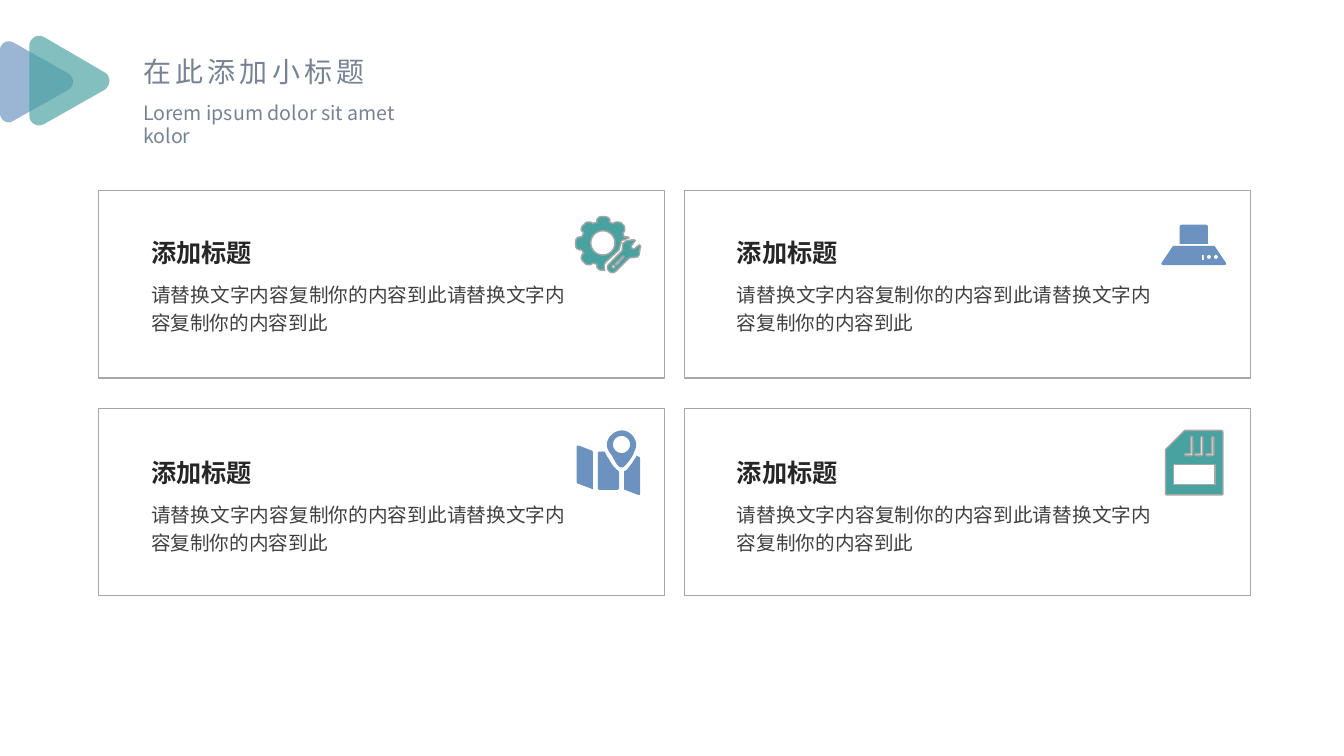
from math import cos, pi, sin

from lxml import etree
from pptx import Presentation
from pptx.dml.color import RGBColor
from pptx.enum.shapes import MSO_SHAPE
from pptx.enum.text import MSO_ANCHOR, MSO_AUTO_SIZE, PP_ALIGN
from pptx.oxml.ns import qn
from pptx.util import Emu, Pt

RECTANGLE = MSO_SHAPE.RECTANGLE
TOP = MSO_ANCHOR.TOP
NO_AUTOFIT = MSO_AUTO_SIZE.NONE
LEFT, JUSTIFY = PP_ALIGN.LEFT, PP_ALIGN.JUSTIFY

EMU_PER_PX = 9144
FONT = "Noto Sans CJK SC"
TEAL, BLUE, GREY, SLATE = "48A2A0", "6C92C0", "A6A6A6", "768394"
HEADING_INK, BODY_INK = "262626", "404040"
HEADING = "添加标题"
BODY = "请替换文字内容复制你的内容到此请替换文字内容复制你的内容到此"
COLUMNS = (98, 679)
ROWS = ((189, 225), (405, 443))

BACK_ARROW = (
    "M 68 73 L 13 42 C 7 39 0 43 0 50 L 0 112 C 0 119 7 124 13 120 "
    "L 68 89 C 74 85 74 77 68 73")
FRONT_ARROW = (
    "M 104 72 L 44 37 C 37 33 29 38 29 46 L 29 115 C 29 122 37 127 44 123 "
    "L 104 89 C 110 85 110 75 104 72")
GEAR = (
    "M 596 215 L 600 215 C 603 215 605 217 605 219 L 605 221 "
    "C 606 221 607 221 608 222 L 609 221 C 611 220 614 220 616 221 "
    "L 619 224 C 620 226 620 229 619 230 L 618 231 C 618 232 619 234 619 235 "
    "L 621 235 C 622 235 623 235 624 236 L 619 238 C 617 238 616 239 616 241 "
    "L 614 248 L 601 260 C 599 262 599 266 600 268 L 596 268 "
    "C 594 268 592 266 592 264 L 592 262 C 590 262 589 261 588 261 L 587 262 "
    "C 585 263 583 263 581 262 L 578 259 C 576 257 576 254 578 252 L 579 251 "
    "C 578 250 578 249 577 248 L 576 248 C 573 248 571 246 571 244 L 571 239 "
    "C 571 237 573 235 576 235 L 577 235 C 578 234 578 232 579 231 L 578 230 "
    "C 576 229 576 226 578 224 L 581 221 C 583 220 585 220 587 221 L 588 222 "
    "C 589 221 590 221 592 221 L 592 219 C 592 217 594 215 596 215")
WRENCH = (
    "M 628 238 C 629 238 630 238 630 239 L 627 243 C 625 245 627 247 629 247 "
    "L 634 243 C 635 243 636 245 635 246 L 634 253 C 633 254 633 255 632 255 "
    "L 624 256 L 611 269 C 609 271 606 271 604 269 C 602 267 602 264 604 262 "
    "L 617 249 L 618 241 C 619 241 620 240 621 239 L 627 238 L 628 238")
WRENCH_SLOT = (
    "M 618 254 L 617 255 L 611 261 C 610 262 611 263 612 263 L 618 256 "
    "C 619 256 619 254 618 254")
MAP_RIGHT = (
    "M 631 452 L 633 453 C 634 453 635 454 635 455 L 635 490 "
    "C 635 491 634 491 633 491 L 620 486 C 619 486 619 485 619 484 L 619 468 "
    "C 619 467 621 467 622 466 C 624 463 627 460 629 456 C 630 455 631 454 631 452")
MAP_MIDDLE = (
    "M 595 448 L 600 448 C 601 451 602 453 603 454 C 606 459 608 463 612 466 "
    "L 614 468 L 614 484 C 614 485 613 486 612 486 L 595 486 "
    "C 593 486 593 485 593 484 L 593 450 C 593 449 593 448 595 448")
MAP_LEFT = (
    "M 574 442 L 587 447 C 588 448 588 448 588 449 L 588 485 "
    "C 588 485 588 486 587 485 L 574 480 C 573 480 572 479 572 478 L 572 443 "
    "C 572 442 573 442 574 442")
MAP_PIN = (
    "M 617 427 C 624 427 631 434 631 441 C 631 445 629 448 628 451 "
    "C 626 455 622 460 619 463 C 618 464 615 464 614 463 "
    "C 611 460 609 456 607 452 L 604 448 C 603 446 602 444 602 441 "
    "C 602 434 609 427 617 427")
HOOD_BASE = (
    "M 1164 244 L 1204 244 C 1205 244 1205 245 1206 246 L 1216 261 "
    "C 1216 262 1216 263 1214 263 L 1154 263 C 1152 263 1152 262 1152 261 "
    "L 1162 246 C 1163 245 1163 244 1164 244")
HOOD_FLUE = (
    "M 1172 223 L 1196 223 C 1197 223 1198 224 1198 225 L 1198 242 L 1170 242 "
    "L 1170 225 C 1170 224 1171 223 1172 223")
HOOD_SWITCH = "M 1192 253 L 1194 253 L 1194 258 L 1192 258"
CARD_BODY = (
    "M 1211 427 L 1175 427 L 1174 428 L 1156 446 L 1156 490 L 1157 491 "
    "L 1211 491 C 1212 491 1213 491 1213 490 L 1213 429 C 1213 428 1212 427 1211 427")
CARD_CONTACT = (
    "M 1176 450 L 1181 450 L 1181 434 C 1181 433 1183 433 1183 434 L 1183 451 "
    "L 1182 452 L 1176 452 C 1175 452 1175 450 1176 450")
CARD_LABEL = "M 1164 461 L 1205 461 L 1205 481 L 1164 481"


def px(length):
    return Emu(round(length * EMU_PER_PX))


def color(hex_text):
    return RGBColor.from_string(hex_text)


def circle(center_x, center_y, radius):
    angles = [2 * pi * step / 32 for step in range(32)]
    return [(center_x + radius * cos(a), center_y + radius * sin(a)) for a in angles]


def bezier(points, steps=8):
    for step in range(1, steps + 1):
        t = step / steps
        weights = ((1 - t) ** 3, 3 * t * (1 - t) ** 2, 3 * t * t * (1 - t), t ** 3)
        yield tuple(sum(w * p[axis] for w, p in zip(weights, points)) for axis in (0, 1))


def trace(outline, shift=0):
    words = iter(outline.split())
    points = []
    for command in words:
        count = 3 if command == "C" else 1
        stops = [(int(next(words)) + shift, int(next(words))) for _ in range(count)]
        points += bezier([points[-1], *stops]) if command == "C" else stops
    return points


class SlidePainter:
    def __init__(self, page):
        self.page = page
        self.font = FONT

    def fill_text(self, box, place, text, size, ink, bold=False, align=LEFT,
                  leading=1.0, tracking=0):
        box.left, box.top, box.width, box.height = map(px, place)
        frame = box.text_frame
        frame.word_wrap = True
        frame.auto_size = NO_AUTOFIT
        frame.vertical_anchor = TOP
        para = frame.paragraphs[0]
        para.alignment = align
        para.line_spacing = leading
        para.space_before = Pt(0)
        span = para.add_run()
        span.text = text
        span.font.name = self.font
        span.font.size = Pt(size)
        span.font.bold = bold
        span.font.color.rgb = color(ink)
        properties = span.font._element
        etree.SubElement(properties, qn("a:ea")).set("typeface", self.font)
        if tracking:
            properties.set("spc", str(tracking * 100))

    def text(self, place, text, size, ink, **style):
        box = self.page.shapes.add_textbox(*map(px, place))
        self.fill_text(box, place, text, size, ink, **style)

    def frame(self, place):
        box = self.page.shapes.add_shape(RECTANGLE, *map(px, place))
        box.shadow.inherit = False
        box.fill.background()
        self.edge(box, GREY)

    def edge(self, shape, ink):
        if ink:
            shape.line.color.rgb = color(ink)
            shape.line.width = Pt(1)
        else:
            shape.line.fill.background()

    def drawing(self, contours, fill, line=None, opacity=100):
        rings = [[(px(x), px(y)) for x, y in contour] for contour in contours]
        builder = self.page.shapes.build_freeform(*rings[0][0], scale=1.0)
        builder.add_line_segments(rings[0][1:], close=True)
        for ring in rings[1:]:
            builder.move_to(*ring[0])
            builder.add_line_segments(ring[1:], close=True)
        shape = builder.convert_to_shape()
        shape.shadow.inherit = False
        shape.fill.solid()
        shape.fill.fore_color.rgb = color(fill)
        if opacity < 100:
            tint = shape._element.spPr.find(qn("a:solidFill")).find(qn("a:srgbClr"))
            etree.SubElement(tint, qn("a:alpha")).set("val", str(opacity * 1000))
        self.edge(shape, line)


def main():
    deck = Presentation()
    deck.slide_width, deck.slide_height = px(1333), px(750)
    page = deck.slides.add_slide(deck.slide_layouts[0])
    painter = SlidePainter(page)

    painter.fill_text(page.shapes.title, (132, 49, 246, 44), "在此添加小标题", 20, SLATE,
                      tracking=3)
    painter.fill_text(page.placeholders[1], (132, 95, 319, 34),
                      "Lorem ipsum dolor sit amet kolor", 14, SLATE)
    for arrow, fill in ((BACK_ARROW, BLUE), (FRONT_ARROW, TEAL)):
        painter.drawing([trace(arrow)], fill, opacity=68)

    gear = [trace(GEAR), circle(598, 241, 12), trace(WRENCH), trace(WRENCH_SLOT),
            circle(608.5, 264.5, 1.5)]
    location = [trace(MAP_RIGHT), trace(MAP_MIDDLE), trace(MAP_LEFT), trace(MAP_PIN),
                circle(616.5, 441, 8.5)]
    hood = [trace(HOOD_BASE), trace(HOOD_FLUE), trace(HOOD_SWITCH),
            circle(1199, 255, 2), circle(1206, 255, 2)]
    memory_card = [trace(CARD_BODY), trace(CARD_LABEL)]
    memory_card += [trace(CARD_CONTACT, shift) for shift in (0, 10, 21)]
    icons = ((gear, TEAL, GREY), (location, BLUE, None),
             (hood, BLUE, None), (memory_card, TEAL, GREY))

    cells = [(left, top, text_top) for left in COLUMNS for top, text_top in ROWS]
    for (left, top, text_top), icon in zip(cells, icons):
        painter.frame((left, top, 561, 186))
        painter.drawing(*icon)
        painter.text((left + 42, text_top + 46, 431, 67), BODY, 14, BODY_INK,
                     align=JUSTIFY, leading=1.2)
        painter.text((left + 42, text_top, 224, 45), HEADING, 18, HEADING_INK,
                     bold=True, align=JUSTIFY, leading=1.2)

    deck.save("out.pptx")


if __name__ == "__main__":
    main()
